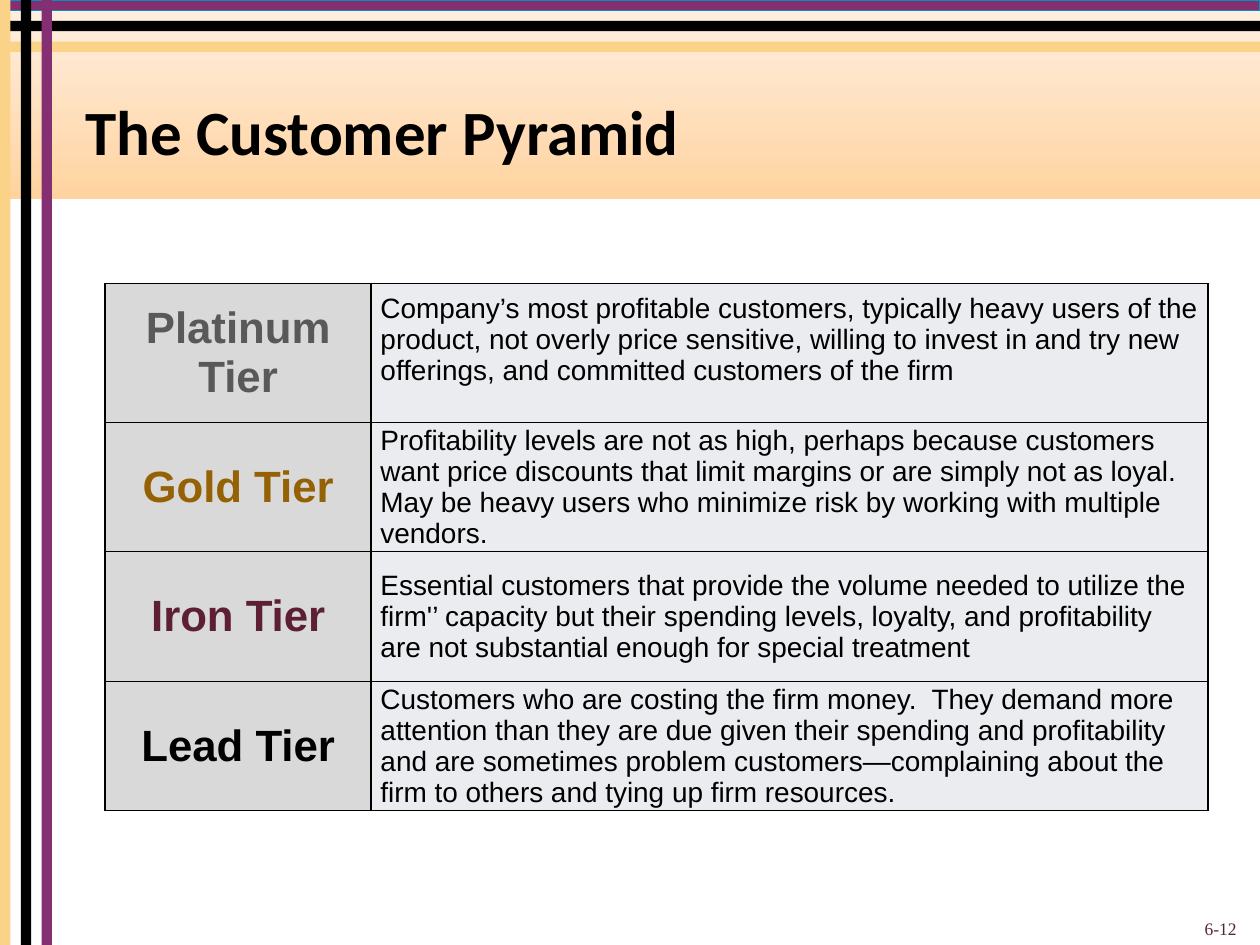
import dataclasses

import pptx
import pptx.dml.color
import pptx.enum.shapes
import pptx.enum.text
import pptx.oxml
import pptx.oxml.ns
import pptx.util

Cm = pptx.util.Cm
Pt = pptx.util.Pt
Align = pptx.enum.text.PP_ALIGN
Anchor = pptx.enum.text.MSO_ANCHOR

WIDTH, HEIGHT = 25.4, 19.05
THICK, STEP = 0.21, 0.42

COLORS = {
    "plum": "852F73",
    "sand": "FBD388",
    "black": "000000",
    "blue": "0391BD",
    "peach": "FFD3A0",
    "cream": "FFF0E3",
    "label": "D9D9D9",
    "body": "EBECF0",
    "slate": "595959",
    "gold": "946204",
    "iron": "5C1F34",
    "wine": "51253A",
}


@dataclasses.dataclass
class Bar:
    left: float
    top: float
    width: float
    height: float
    color: str


@dataclasses.dataclass
class Tier:
    name: str
    color: str
    text: str
    height: float
    foot: float = 0


BARS = [
    Bar(0, STEP * i, WIDTH, THICK, color)
    for i, color in enumerate(("plum", "black", "sand"))
] + [
    Bar(STEP * i, 0, THICK, HEIGHT, color)
    for i, color in enumerate(("sand", "black", "plum"))
]

TIERS = [
    Tier("Platinum Tier", "slate",
         "Company’s most profitable customers, typically heavy users of the product, "
         "not overly price sensitive, willing to invest in and try new offerings, "
         "and committed customers of the firm", 2.8, 0.53),
    Tier("Gold Tier", "gold",
         "Profitability levels are not as high, perhaps because customers want price "
         "discounts that limit margins or are simply not as loyal. May be heavy users "
         "who minimize risk by working with multiple vendors.", 2.6),
    Tier("Iron Tier", "iron",
         "Essential customers that provide the volume needed to utilize the firm'’ "
         "capacity but their spending levels, loyalty, and profitability are not "
         "substantial enough for special treatment", 2.62),
    Tier("Lead Tier", "black",
         "Customers who are costing the firm money.  They demand more attention than "
         "they are due given their spending and profitability and are sometimes problem "
         "customers—complaining about the firm to others and tying up firm resources.",
         2.6),
]


def tint(name: str) -> pptx.dml.color.RGBColor:
    return pptx.dml.color.RGBColor.from_string(COLORS[name])


def style(frame, font: str, size: float, color: str, bold: bool, align) -> None:
    for para in frame.paragraphs:
        para.alignment = align
        for run in para.runs:
            run.font.name = font
            run.font.size = Pt(size)
            run.font.bold = bold
            run.font.color.rgb = tint(color)


def draw_bar(slide, bar: Bar):
    shape = slide.shapes.add_shape(
        pptx.enum.shapes.MSO_SHAPE.RECTANGLE,
        Cm(bar.left), Cm(bar.top), Cm(bar.width), Cm(bar.height))
    shape.shadow.inherit = False
    shape.fill.solid()
    shape.fill.fore_color.rgb = tint(bar.color)
    shape.line.fill.background()
    return shape


def draw_band(slide) -> None:
    band = draw_bar(slide, Bar(0, 0, WIDTH, 4.01, "peach"))
    band.fill.gradient()
    band.fill.gradient_angle = 90
    for stop, color in zip(band.fill.gradient_stops, ("peach", "cream")):
        stop.color.rgb = tint(color)


def draw_title(slide, text: str) -> None:
    title = slide.shapes.title
    title.left, title.top, title.width, title.height = Cm(1.47), Cm(1.47), Cm(23.5), Cm(2.54)
    frame = title.text_frame
    frame.text = text
    frame.vertical_anchor = Anchor.MIDDLE
    frame.paragraphs[0].line_spacing = 0.85
    style(frame, "Calibri", 36, "black", True, Align.LEFT)
    slide.shapes._spTree.append(title._element)


def edge_cell(cell) -> None:
    props = cell._tc.get_or_add_tcPr()
    for side in "LRTB":
        props.append(pptx.oxml.parse_xml(
            f'<a:ln{side} {pptx.oxml.ns.nsdecls("a")} w="12700"><a:solidFill>'
            f'<a:srgbClr val="{COLORS["black"]}"/></a:solidFill></a:ln{side}>'))


def fill_cell(cell, text: str, back: str, size: float, color: str,
              bold: bool, align, foot: float = 0) -> None:
    edge_cell(cell)
    cell.fill.solid()
    cell.fill.fore_color.rgb = tint(back)
    cell.margin_left = cell.margin_right = Cm(0.19)
    cell.margin_top, cell.margin_bottom = Cm(0), Cm(foot)
    cell.vertical_anchor = Anchor.MIDDLE
    cell.text_frame.text = text
    style(cell.text_frame, "Arial", size, color, bold, align)


def draw_tiers(slide, tiers: list[Tier]) -> None:
    widths = (5.36, 16.87)
    total = sum(tier.height for tier in tiers)
    table = slide.shapes.add_table(
        len(tiers), 2, Cm(2.12), Cm(5.72), Cm(sum(widths)), Cm(total)).table
    table.first_row = table.horz_banding = False
    for col, width in zip(table.columns, widths):
        col.width = Cm(width)
    for i, tier in enumerate(tiers):
        table.rows[i].height = Cm(tier.height)
        fill_cell(table.cell(i, 0), tier.name, "label", 25, tier.color, True, Align.CENTER)
        fill_cell(table.cell(i, 1), tier.text, "body", 16, "black", False,
                  Align.LEFT, tier.foot)


def draw_page(slide, text: str) -> None:
    frame = slide.shapes.add_textbox(Cm(19.25), Cm(17.78), Cm(5.93), Cm(1.27)).text_frame
    frame.word_wrap = True
    frame.vertical_anchor = Anchor.BOTTOM
    frame.text = text
    style(frame, "Times New Roman", 10, "wine", False, Align.RIGHT)


def main() -> None:
    deck = pptx.Presentation()
    deck.slide_width, deck.slide_height = Cm(WIDTH), Cm(HEIGHT)
    slide = deck.slides.add_slide(deck.slide_layouts[5])
    draw_band(slide)
    shapes = [draw_bar(slide, bar) for bar in BARS]
    shapes[0].line.color.rgb = tint("blue")
    shapes[0].line.width = Pt(0)
    draw_title(slide, "The Customer Pyramid")
    draw_tiers(slide, TIERS)
    draw_page(slide, "6-12")
    deck.save("out.pptx")


if __name__ == "__main__":
    main()
